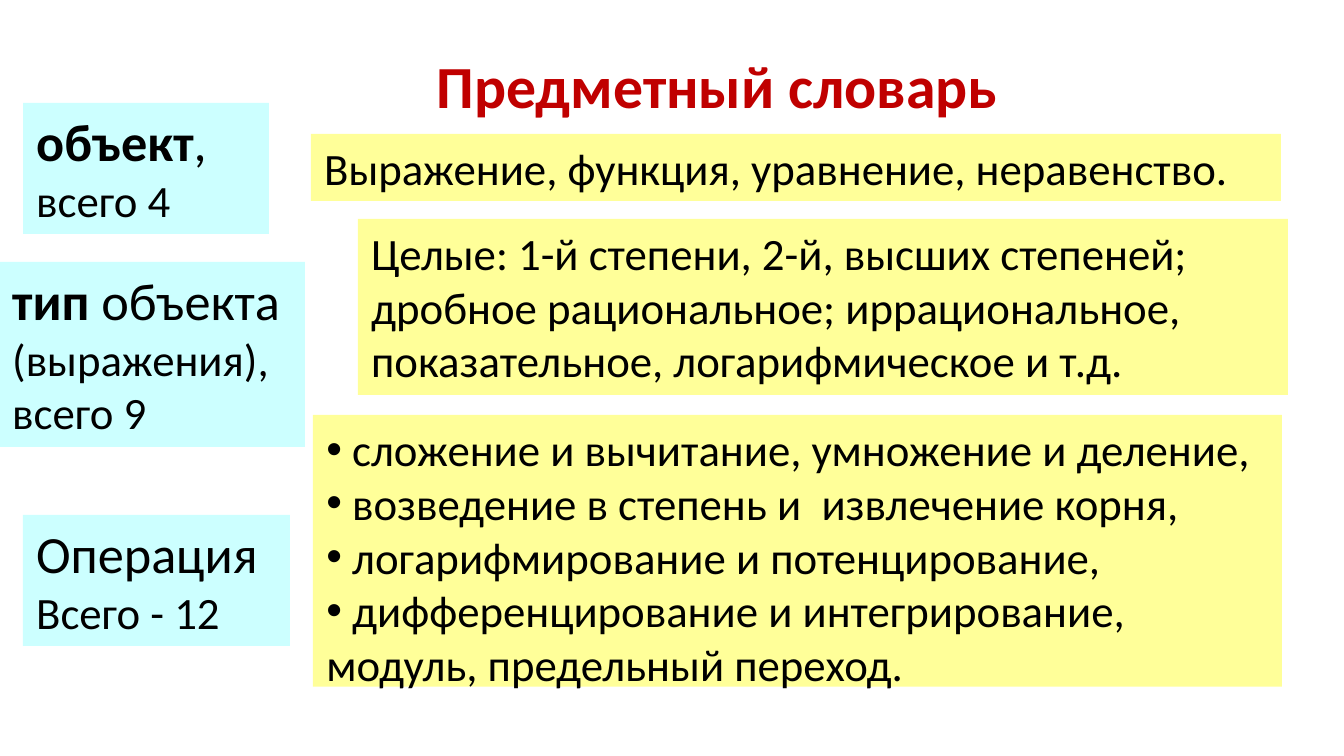
from lxml import etree
from pptx import Presentation
from pptx.dml.color import RGBColor
from pptx.enum.text import MSO_ANCHOR, MSO_AUTO_SIZE, PP_ALIGN
from pptx.oxml.ns import qn
from pptx.util import Emu, Pt

EMU_PER_PX = 914400 / 134.4
TITLE_AND_CONTENT = 1
CENTER = PP_ALIGN.CENTER
MIDDLE = MSO_ANCHOR.MIDDLE
TOP = MSO_ANCHOR.TOP
GROW = MSO_AUTO_SIZE.SHAPE_TO_FIT_TEXT
FIXED = MSO_AUTO_SIZE.NONE

FONT = "Calibri"
BLACK = "000000"
RED = "C00000"
CYAN = "CCFFFF"
YELLOW = "FFFF99"
LARGE = 28
NORMAL = 24

LABELS = [
    ((23, 103, 246, 131), [
        [("объект", LARGE, True), (", ", LARGE, False), ("всего 4", NORMAL, False)],
    ]),
    ((-1, 262, 306, 185), [
        [("тип ", LARGE, True), ("объекта ", LARGE, False), ("(выражения),", NORMAL, False)],
        [("всего 9", NORMAL, False)],
    ]),
    ((23, 515, 267, 131), [
        [("Операция", LARGE, False)],
        [("Всего - 12", NORMAL, False)],
    ]),
]
EXAMPLES = [
    ((311, 134, 970, 67), ["Выражение, функция, уравнение, неравенство."]),
    ((358, 219, 930, 176), [
        "Целые: 1-й степени, 2-й, высших степеней;",
        "дробное рациональное; иррациональное, показательное, логарифмическое и т.д.",
    ]),
]
OPERATIONS = [
    " сложение и вычитание, умножение и деление,",
    " возведение в степень и  извлечение корня,",
    " логарифмирование и потенцирование,",
    " дифференцирование и интегрирование, модуль, предельный переход.",
]


def px(length):
    """Turn whole pixels into EMU."""
    return Emu(round(length * EMU_PER_PX))


def color(value):
    """Turn a hex string into a colour."""
    return RGBColor.from_string(value)


def place(shape, area):
    """Move and size a shape in pixels."""
    shape.left, shape.top, shape.width, shape.height = map(px, area)


def fill(shape, value):
    """Give a shape a solid fill."""
    shape.fill.solid()
    shape.fill.fore_color.rgb = color(value)


def set_frame(shape, anchor, auto_size):
    """Wrap, anchor and fit the text of a shape."""
    frame = shape.text_frame
    frame.word_wrap = True
    frame.vertical_anchor = anchor
    frame.auto_size = auto_size


def add_bullet(paragraph):
    """Put a bullet at the left edge, with wrapped lines under it."""
    properties = paragraph._p.get_or_add_pPr()
    properties.set("marL", "0")
    properties.set("indent", "0")
    etree.SubElement(properties, qn("a:buChar"), char="•")


def write_paragraph(paragraph, spans, value=BLACK):
    """Write the spans of one paragraph and set its font."""
    paragraph.space_before = Pt(0)
    paragraph.font.name = FONT
    paragraph.font.color.rgb = color(value)
    styles = {(size, bold) for _, size, bold in spans}
    for text, size, bold in spans:
        span = paragraph.add_run()
        span.text = text
        font = paragraph.font if len(styles) == 1 else span.font
        font.size = Pt(size)
        font.bold = bold


def write_paragraphs(shape, paragraphs, bulleted=False):
    """Fill a shape with paragraphs, each a list of spans."""
    frame = shape.text_frame
    for index, spans in enumerate(paragraphs):
        paragraph = frame.add_paragraph() if index else frame.paragraphs[0]
        if bulleted:
            add_bullet(paragraph)
        write_paragraph(paragraph, spans)


def plain(lines):
    """Make one regular span for each line."""
    return [[(line, NORMAL, False)] for line in lines]


def add_box(page, area, paragraphs, value):
    """Add a filled text box."""
    box = page.shapes.add_textbox(*map(px, area))
    fill(box, value)
    set_frame(box, TOP, GROW)
    write_paragraphs(box, paragraphs)


def set_title(page):
    """Place and write the slide title."""
    title = page.shapes.title
    place(title, (145, 50, 1145, 70))
    set_frame(title, MIDDLE, FIXED)
    paragraph = title.text_frame.paragraphs[0]
    paragraph.alignment = CENTER
    write_paragraph(paragraph, [("Предметный словарь", 32, True)], RED)


def set_operations(page):
    """Place and write the list of operations."""
    body = page.placeholders[1]
    place(body, (313, 415, 969, 285))
    fill(body, YELLOW)
    set_frame(body, TOP, GROW)
    write_paragraphs(body, plain(OPERATIONS), bulleted=True)


def main():
    """Build and save the slide."""
    deck = Presentation()
    deck.slide_width, deck.slide_height = px(1344), px(756)
    page = deck.slides.add_slide(deck.slide_layouts[TITLE_AND_CONTENT])
    set_title(page)
    for area, paragraphs in LABELS:
        add_box(page, area, paragraphs, CYAN)
    for area, lines in EXAMPLES:
        add_box(page, area, plain(lines), YELLOW)
    set_operations(page)
    deck.save("out.pptx")


if __name__ == "__main__":
    main()
